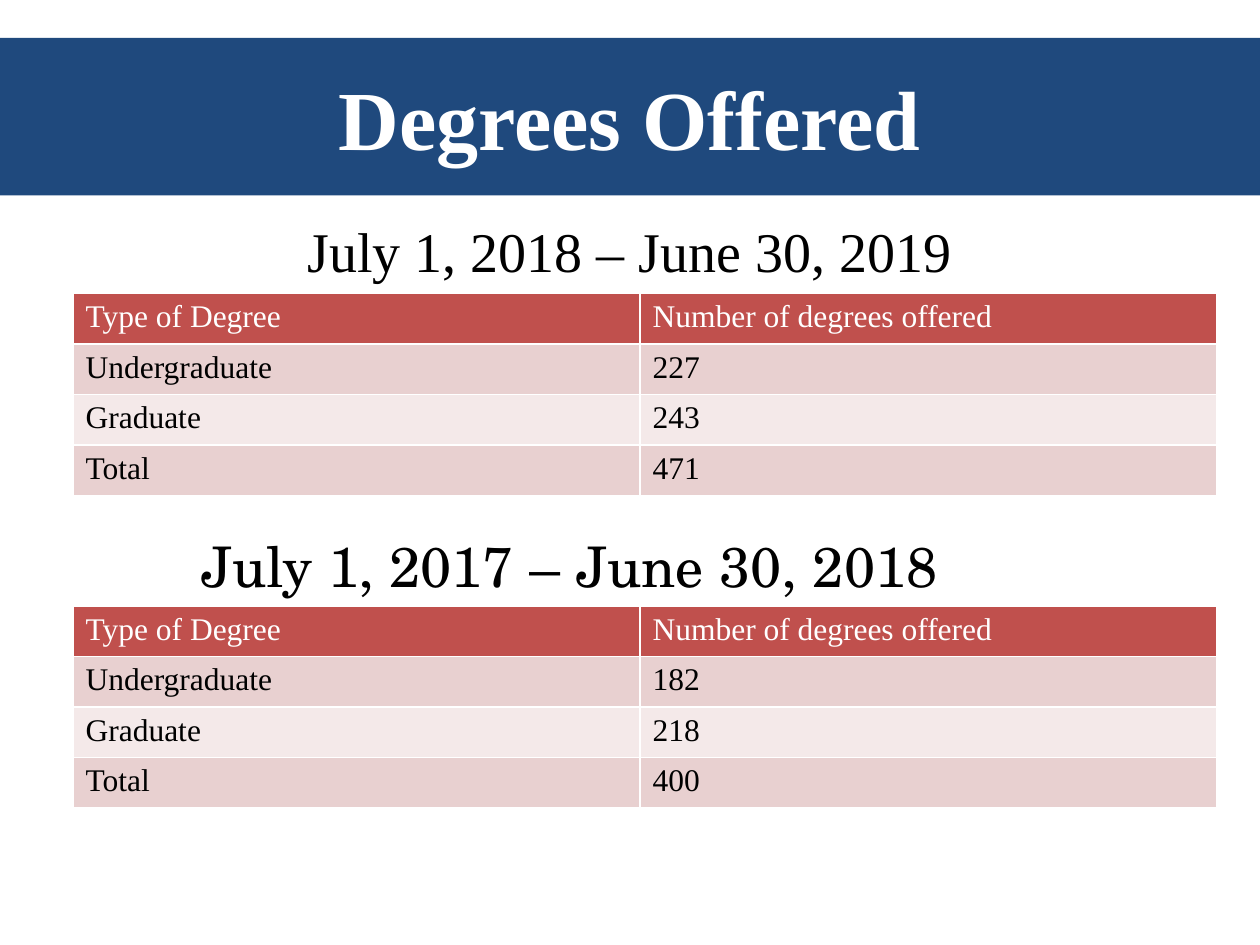
from dataclasses import dataclass

from lxml.etree import SubElement
from pptx import Presentation
from pptx.dml.color import RGBColor as RGB
from pptx.enum.text import MSO_ANCHOR as Anchor, PP_ALIGN as Align
from pptx.oxml.ns import qn
from pptx.util import Inches, Pt


@dataclass(frozen=True)
class Theme:
    font: str = "Times New Roman"
    period_font: str = "TeX Gyre Schola"
    title_size: int = 48
    period_size: int = 32
    table_size: int = 18
    white: str = "FFFFFF"
    black: str = "000000"
    banner: str = "1F497D"
    header: str = "C0504D"
    bands: tuple = ("E8D0D0", "F4E9E9")


def write(frame, text, *, font, size, color, bold=False, align=Align.LEFT, before=0):
    paragraph = frame.paragraphs[0]
    paragraph.alignment = align
    paragraph.space_before = Pt(before)
    run = paragraph.add_run()
    run.text = text
    run.font.name = font
    run.font.size = Pt(size)
    run.font.bold = bold
    run.font.color.rgb = RGB.from_string(color)


def fill_solid(target, color):
    target.fill.solid()
    target.fill.fore_color.rgb = RGB.from_string(color)


def outline_cell(cell, color):
    """Put a one-point border on all four sides; must run before the cell is filled."""
    properties = cell._tc.get_or_add_tcPr()
    for side in ("a:lnL", "a:lnR", "a:lnT", "a:lnB"):
        border = SubElement(properties, qn(side), w=str(Pt(1)))
        solid = SubElement(border, qn("a:solidFill"))
        SubElement(solid, qn("a:srgbClr"), val=color)


class DegreeSlide:
    def __init__(self, presentation, theme):
        self.theme = theme
        self.slide = presentation.slides.add_slide(presentation.slide_layouts[5])

    def title_banner(self, text, left, top, width, height):
        banner = self.slide.shapes.title
        banner.left, banner.top = Inches(left), Inches(top)
        banner.width, banner.height = Inches(width), Inches(height)
        fill_solid(banner, self.theme.banner)
        banner.text_frame.vertical_anchor = Anchor.MIDDLE
        write(banner.text_frame, text, font=self.theme.font, size=self.theme.title_size,
              color=self.theme.white, bold=True, align=Align.CENTER)

    def period(self, text, left, top, width, height, **text_format):
        box = self.slide.shapes.add_textbox(
            Inches(left), Inches(top), Inches(width), Inches(height))
        box.text_frame.word_wrap = True
        write(box.text_frame, text, size=self.theme.period_size,
              color=self.theme.black, **text_format)

    def degree_table(self, counts, top, row_height):
        theme = self.theme
        columns = (4.5, 4.58)
        rows = [("Type of Degree", "Number of degrees offered"),
                *zip(("Undergraduate", "Graduate", "Total"), counts)]
        table = self.slide.shapes.add_table(
            len(rows), len(columns), Inches(0.58), Inches(top),
            Inches(sum(columns)), Inches(row_height * len(rows))).table
        for column, width in zip(table.columns, columns):
            column.width = Inches(width)
        for r, values in enumerate(rows):
            is_header = r == 0
            background = theme.header if is_header else theme.bands[(r - 1) % 2]
            for c, value in enumerate(values):
                cell = table.cell(r, c)
                outline_cell(cell, theme.white)
                fill_solid(cell, background)
                write(cell.text_frame, str(value), font=theme.font, size=theme.table_size,
                      color=theme.white if is_header else theme.black)


def main():
    presentation = Presentation()
    presentation.slide_width, presentation.slide_height = Inches(10), Inches(7.5)
    theme = Theme()
    degrees = DegreeSlide(presentation, theme)

    degrees.title_banner("Degrees Offered", 0, 0.3, 10, 1.25)
    degrees.period("July 1, 2018 – June 30, 2019", 0, 1.67, 10, 0.64,
                   font=theme.font, align=Align.CENTER, before=5)
    degrees.degree_table((227, 243, 471), top=2.33, row_height=0.375)
    degrees.period("July 1, 2017 – June 30, 2018", 1.5, 4.17, 6.42, 0.64,
                   font=theme.period_font)
    degrees.degree_table((182, 218, 400), top=4.81, row_height=0.4)

    presentation.save("out.pptx")


if __name__ == "__main__":
    main()
